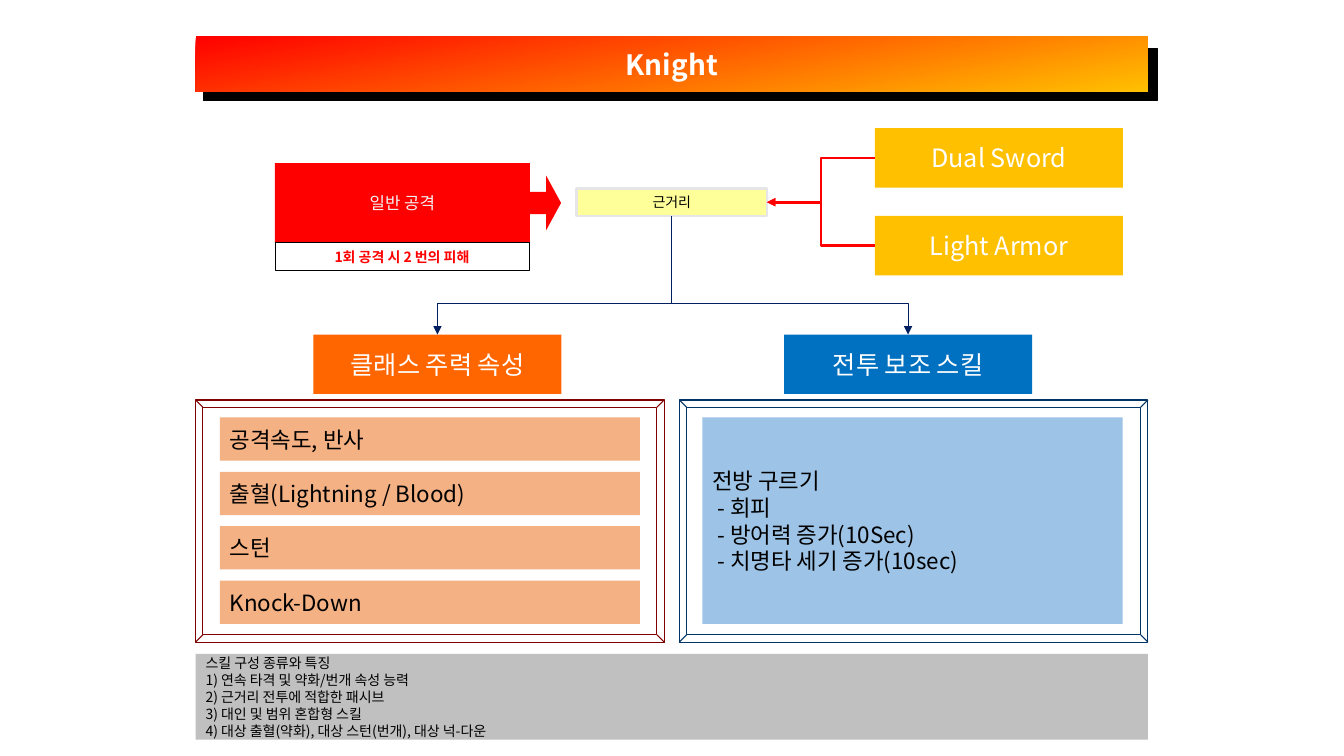
"""Build the Knight class slide."""
import pptx
import pptx.util
import pptx.dml.color
import pptx.enum.shapes
import pptx.enum.text
import pptx.oxml
import pptx.oxml.ns

Cm, Pt = pptx.util.Cm, pptx.util.Pt
KIND = pptx.enum.shapes.MSO_SHAPE
ALIGN = pptx.enum.text.PP_ALIGN
FONT = "Noto Sans CJK KR"
HUE = {
    "black": "000000", "white": "FFFFFF", "pale": "F2F2F2", "red": "FF0000",
    "gold": "FFC000", "cream": "FFFF99", "mist": "E7E6E6", "peach": "F4B183",
    "orange": "FF6600", "blue": "0070C0", "sky": "9DC3E6", "gray": "C0C0C0",
    "maroon": "800000", "teal": "003366", "navy": "002060",
}

TITLE = "Knight"
ATTACK = "일반 공격"
DAMAGE = "1회 공격 시 2 번의 피해"
RANGE = "근거리"
GEAR = ["Dual Sword", "Light Armor"]
GROUPS = [
    ("클래스 주력 속성", "orange", "maroon", 7.9, 4.93),
    ("전투 보조 스킬", "blue", "teal", 19.76, 17.12),
]
TRAITS = ["공격속도, 반사", "출혈(Lightning / Blood)", "스턴", "Knock-Down"]
SKILLS = ["전방 구르기", " - 회피", " - 방어력 증가(10Sec)", " - 치명타 세기 증가(10sec)"]
NOTES = [
    "스킬 구성 종류와 특징",
    "1) 연속 타격 및 약화/번개 속성 능력",
    "2) 근거리 전투에 적합한 패시브",
    "3) 대인 및 범위 혼합형 스킬",
    "4) 대상 출혈(약화), 대상 스턴(번개), 대상 넉-다운",
]

LEFT, WIDE = 4.93, 24
HEAD_W, HEAD_H, HEAD_Y = 6.25, 1.5, 8.43
GEAR_X, GEAR_Y, GEAR_STEP = 22.05, 3.23, 2.21
CORE = (14.53, 4.75, 4.8, 0.69)
BAR_Y, BAR_W, BAR_H, BAR_STEP = 10.52, 10.59, 1.09, 1.37


def rgb(name):
    """Return a named colour."""
    return pptx.dml.color.RGBColor.from_string(HUE[name])


def style(frame, lines, size, color, bold, align):
    """Fill a text frame and format its runs."""
    frame.word_wrap = True
    frame.vertical_anchor = pptx.enum.text.MSO_ANCHOR.MIDDLE
    frame.text = "\n".join(lines)
    for para in frame.paragraphs:
        para.alignment = align
        for run in para.runs:
            font = run.font
            font.size, font.bold, font.name = Pt(size), bold, FONT
            font.color.rgb = rgb(color)
            east = pptx.oxml.parse_xml(
                f'<a:ea {pptx.oxml.ns.nsdecls("a")} typeface="{FONT}"/>')
            run._r.get_or_add_rPr().append(east)


def block(box, fill=None, lines=(), size=10, color="black", bold=False,
          align=ALIGN.CENTER, edge=None, width=0.75, kind=KIND.RECTANGLE, adj=()):
    """Add one shape with its text."""
    shape = slide.shapes.add_shape(kind, *map(Cm, box))
    shape.shadow.inherit = False
    for i, value in enumerate(adj):
        shape.adjustments[i] = value
    if fill:
        shape.fill.solid()
        shape.fill.fore_color.rgb = rgb(fill)
    else:
        shape.fill.background()
    if edge:
        shape.line.color.rgb = rgb(edge)
        shape.line.width = Pt(width)
    else:
        shape.line.fill.background()
    if lines:
        style(shape.text_frame, lines, size, color, bold, align)
    return shape


def elbow(start, end, color, width, bend=0.5, down=False):
    """Add a bent arrow, leaving sideways or downwards."""
    ends = [start, end]
    if down:
        mx, my = ((a + b) / 2 for a, b in zip(start, end))
        ends = [(mx + y - my, my - x + mx) for x, y in ends]
    line = slide.shapes.add_connector(
        pptx.enum.shapes.MSO_CONNECTOR.ELBOW, *(Cm(v) for p in ends for v in p))
    line.line.color.rgb = rgb(color)
    line.line.width = Pt(width)
    props = line._element.spPr
    if down:
        props.find(pptx.oxml.ns.qn("a:xfrm")).set("rot", "5400000")
    space = pptx.oxml.ns.nsdecls("a")
    guides = props.find(pptx.oxml.ns.qn("a:prstGeom")).get_or_add_avLst()
    guides.append(pptx.oxml.parse_xml(
        f'<a:gd {space} name="adj1" fmla="val {round(bend * 100000)}"/>'))
    line.line._get_or_add_ln().append(
        pptx.oxml.parse_xml(f'<a:tailEnd {space} type="triangle"/>'))
    props.append(pptx.oxml.parse_xml(f"<a:effectLst {space}/>"))


deck = pptx.Presentation()
deck.slide_width, deck.slide_height = Cm(33.87), Cm(19.05)
slide = deck.slides.add_slide(deck.slide_layouts[6])

block((5.13, 1.22, 24.03, 1.32), "black", edge="black")
title = block((LEFT, 0.91, WIDE, 1.4), "red", [TITLE], 20, "white", True)
title.fill.gradient()
title.fill.gradient_angle = 280
for stop, name, place in zip(title.fill.gradient_stops, ("red", "gold"), (0, 1)):
    stop.color.rgb = rgb(name)
    stop.position = place

block(CORE, "cream", [RANGE], edge="mist", width=1.5)
block((6.93, 4.11, 7.21, 2.01), "red", [ATTACK], 12, "pale",
      kind=KIND.RIGHT_ARROW_CALLOUT, adj=(0.278, 0.341, 0.186, 0.891))
block((6.93, 6.12, 6.4, 0.69), None, [DAMAGE], 10, "red", True,
      edge="black", width=0.5)

x, y, w, h = CORE
for i, name in enumerate(GEAR):
    top = GEAR_Y + i * GEAR_STEP
    block((GEAR_X, top, HEAD_W, HEAD_H), "gold", [name], 18, "white")
    elbow((GEAR_X, top + HEAD_H / 2), (x + w, y + h / 2), "red", 2)

for name, fill, edge, head, panel in GROUPS:
    block((panel, 10.08, 11.81, 6.1), edge=edge, kind=KIND.BEVEL, adj=(0.03,))
    block((head, HEAD_Y, HEAD_W, HEAD_H), fill, [name], 18, "white")
    elbow((x + w / 2, y + h), (head + HEAD_W / 2, HEAD_Y), "navy", 0.5, 0.74, True)

for i, name in enumerate(TRAITS):
    block((5.54, BAR_Y + i * BAR_STEP, BAR_W, BAR_H), "peach", [name], 16,
          align=ALIGN.LEFT)
block((17.7, BAR_Y, BAR_W, 3 * BAR_STEP + BAR_H), "sky", SKILLS, 16, align=ALIGN.LEFT)
block((LEFT, 16.48, WIDE, 2.16), "gray", NOTES, align=ALIGN.LEFT)

deck.save("out.pptx")
